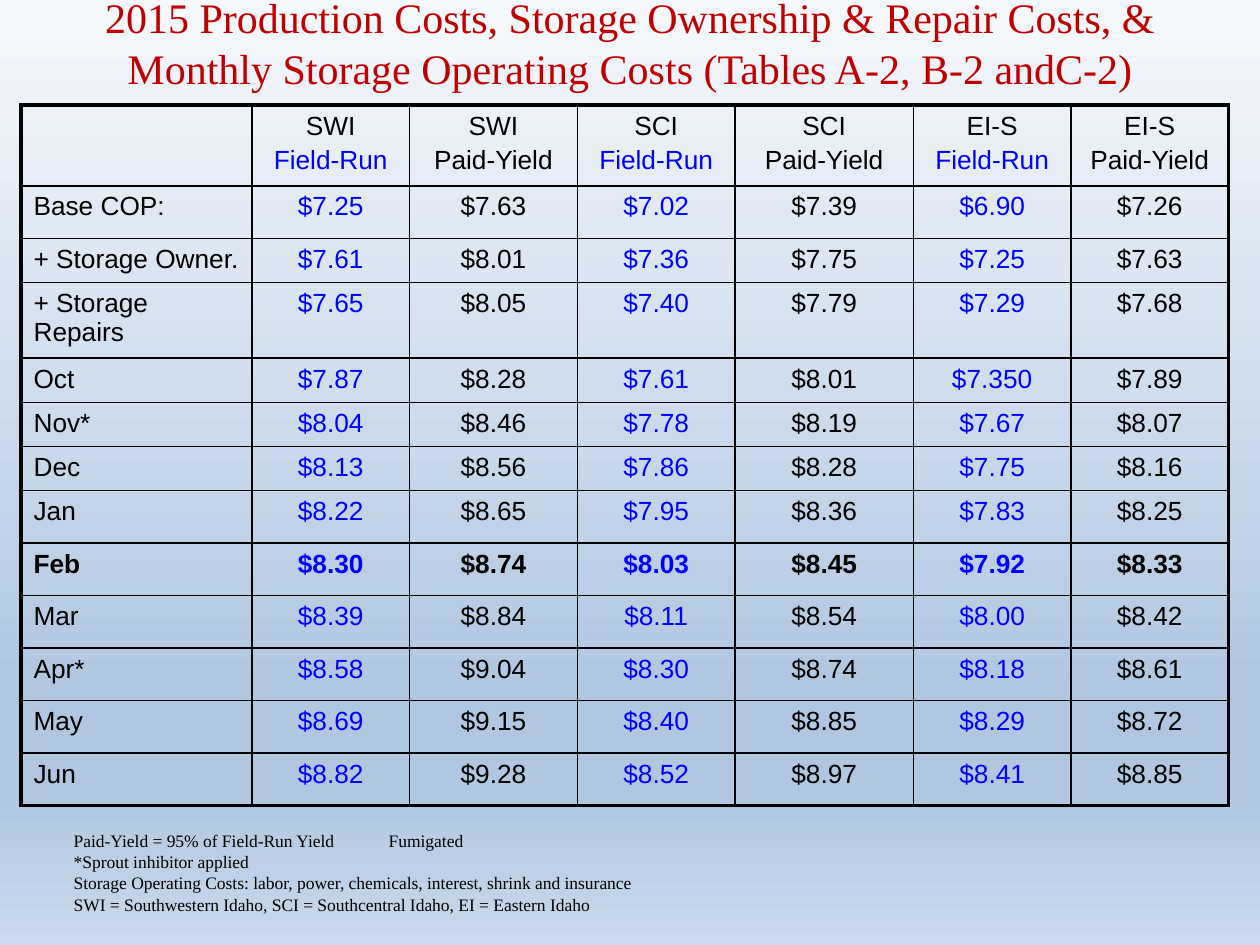
import pptx
import pptx.dml.color
import pptx.enum.text
import pptx.oxml
import pptx.oxml.ns
import pptx.util

Pt = pptx.util.Pt
qn = pptx.oxml.ns.qn
ALIGN = pptx.enum.text.PP_ALIGN

COLORS = {
    "title": "C00000",
    "field_run": "0000FF",
    "ink": "000000",
    "sky_top": "F6F9FC",
    "sky_mid": "B0C6E1",
    "sky_bottom": "CAD9EB",
}
SKY_STOPS = [(0, "sky_top"), (74, "sky_mid"), (83, "sky_mid"), (100, "sky_bottom")]

TITLE = (
    "2015 Production Costs, Storage Ownership & Repair Costs, & "
    "Monthly Storage Operating Costs (Tables A-2, B-2 andC-2)"
)
FOOTNOTES = [
    "Paid-Yield = 95% of Field-Run Yield\tFumigated",
    "*Sprout inhibitor applied",
    "Storage Operating Costs: labor, power, chemicals, interest, shrink and insurance",
    "SWI = Southwestern Idaho, SCI = Southcentral Idaho, EI = Eastern Idaho",
]
REGIONS = ["SWI", "SCI", "EI-S"]
YIELDS = ["Field-Run", "Paid-Yield"]
COSTS = [
    ("Base COP:", "7.25 7.63 7.02 7.39 6.90 7.26"),
    ("+ Storage Owner.", "7.61 8.01 7.36 7.75 7.25 7.63"),
    ("+ Storage Repairs", "7.65 8.05 7.40 7.79 7.29 7.68"),
    ("Oct", "7.87 8.28 7.61 8.01 7.350 7.89"),
    ("Nov*", "8.04 8.46 7.78 8.19 7.67 8.07"),
    ("Dec", "8.13 8.56 7.86 8.28 7.75 8.16"),
    ("Jan", "8.22 8.65 7.95 8.36 7.83 8.25"),
    ("Feb", "8.30 8.74 8.03 8.45 7.92 8.33"),
    ("Mar", "8.39 8.84 8.11 8.54 8.00 8.42"),
    ("Apr*", "8.58 9.04 8.30 8.74 8.18 8.61"),
    ("May", "8.69 9.15 8.40 8.85 8.29 8.72"),
    ("Jun", "8.82 9.28 8.52 8.97 8.41 8.85"),
]
COLUMN_WIDTHS = [132, 90, 96, 90, 102, 90, 90]
ROW_HEIGHTS = [46, 30] + [25] * 5 + [30] * 6


def xml(tag, body, attributes=""):
    ns = pptx.oxml.ns.nsdecls("a")
    return pptx.oxml.parse_xml(f"<a:{tag} {ns} {attributes}>{body}</a:{tag}>")


def color_xml(color):
    return f'<a:srgbClr val="{COLORS[color]}"/>'


def paint_sky(slide):
    fill = slide.background.fill
    fill.gradient()
    fill.gradient_angle = 270
    stops = next(slide.element.iter(qn("a:gsLst")))
    body = "".join(
        f'<a:gs pos="{position * 1000}">{color_xml(color)}</a:gs>'
        for position, color in SKY_STOPS
    )
    stops.getparent().replace(stops, xml("gsLst", body))


def style(paragraph, face, size, color, align=ALIGN.LEFT, bold=False):
    paragraph.alignment = align
    font = paragraph.font
    font.name, font.size, font.bold = face, Pt(size), bold
    font.color.rgb = pptx.dml.color.RGBColor.from_string(COLORS[color])


def add_text(slide, bounds, lines, size, color, align, anchor):
    frame = slide.shapes.add_textbox(*map(Pt, bounds)).text_frame
    frame.word_wrap = True
    frame.vertical_anchor = anchor
    frame.text = "\n".join(lines)
    for paragraph in frame.paragraphs:
        style(paragraph, "Times New Roman", size, color, align)


def set_borders(cell, outer_sides):
    properties = cell._tc.get_or_add_tcPr()
    for index, side in enumerate("LRTB"):
        width = Pt(2.25 if side in outer_sides else 1)
        line = xml(f"ln{side}", f"<a:solidFill>{color_xml('ink')}</a:solidFill>", f'w="{width}"')
        properties.insert(index, line)


def fill_cell(cell, lines, column, bold):
    cell.fill.background()
    cell.text_frame.text = "\n".join(lines)
    for paragraph in cell.text_frame.paragraphs:
        color = "field_run" if column % 2 and paragraph.text not in REGIONS else "ink"
        align = ALIGN.CENTER if column else ALIGN.LEFT
        style(paragraph, "Arial", 15, color, align, bold)
        spacing = xml("spcBef", '<a:spcPct val="20000"/>')
        paragraph._p.get_or_add_pPr().insert(0, spacing)


def add_cost_table(slide):
    header = [[""]] + [[region, kind] for region in REGIONS for kind in YIELDS]
    rows = [header] + [
        [[label]] + [[f"${cost}"] for cost in costs.split()] for label, costs in COSTS
    ]
    last_row, last_column = len(rows) - 1, len(header) - 1
    table = slide.shapes.add_table(
        len(rows), len(header), Pt(12), Pt(60), Pt(sum(COLUMN_WIDTHS)), Pt(sum(ROW_HEIGHTS))
    ).table
    table.first_row = table.horz_banding = False
    for column, width in zip(table.columns, COLUMN_WIDTHS):
        column.width = Pt(width)
    for row, height in zip(table.rows, ROW_HEIGHTS):
        row.height = Pt(height)
    for r, row in enumerate(rows):
        for c, lines in enumerate(row):
            cell = table.cell(r, c)
            fill_cell(cell, lines, c, bold=row[0] == ["Feb"])
            edges = {"L": c == 0, "R": c == last_column, "T": r == 0, "B": r == last_row}
            set_borders(cell, [side for side, outer in edges.items() if outer])


def main():
    deck = pptx.Presentation()
    deck.slide_width, deck.slide_height = Pt(720), Pt(540)
    slide = deck.slides.add_slide(deck.slide_layouts[6])
    anchor = pptx.enum.text.MSO_ANCHOR
    paint_sky(slide)
    add_text(slide, (36, 0, 648, 48), [TITLE], 24, "title", ALIGN.CENTER, anchor.MIDDLE)
    add_cost_table(slide)
    add_text(slide, (35, 471, 414, 55.4), FOOTNOTES, 10, "ink", ALIGN.LEFT, anchor.TOP)
    deck.save("out.pptx")


if __name__ == "__main__":
    main()
